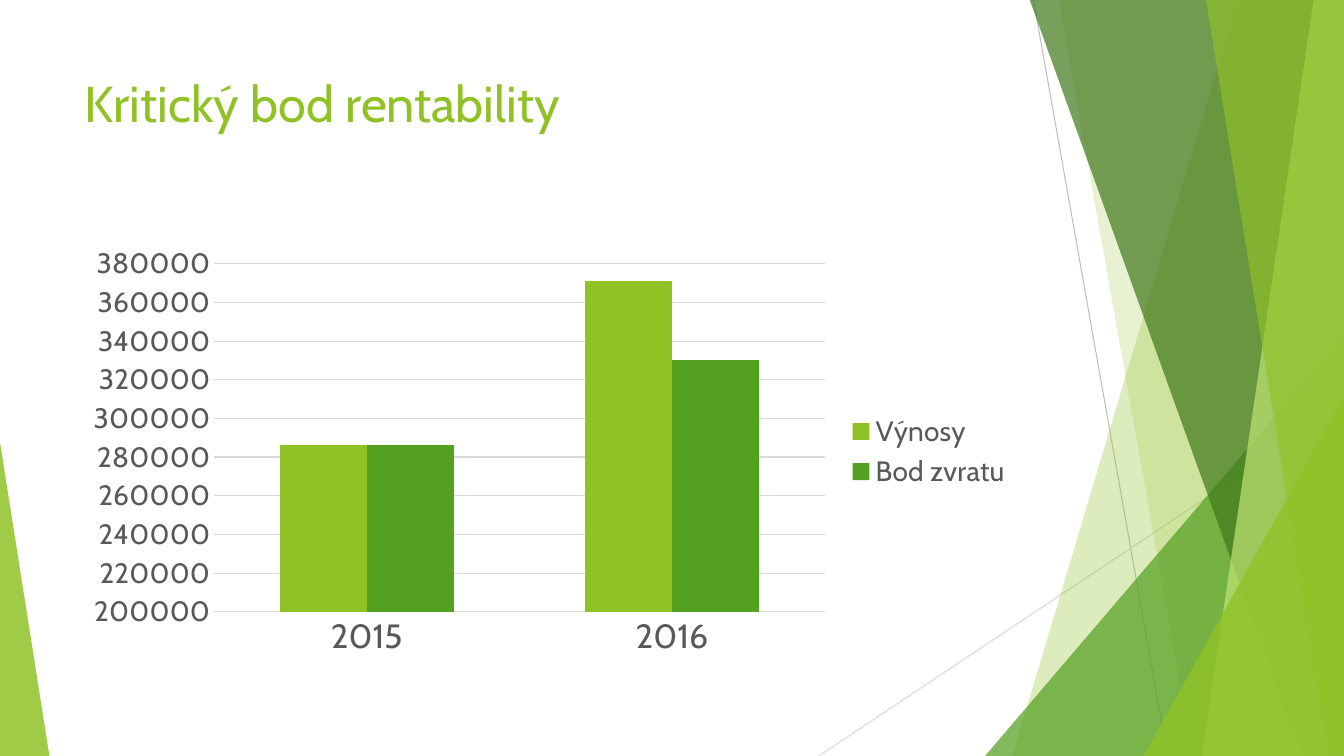
from lxml.etree import SubElement
from pptx import Presentation
from pptx.chart.data import CategoryChartData
from pptx.dml.color import RGBColor
from pptx.enum.chart import XL_CHART_TYPE, XL_LEGEND_POSITION, XL_TICK_MARK
from pptx.enum.shapes import MSO_CONNECTOR, MSO_SHAPE
from pptx.enum.text import MSO_ANCHOR, PP_ALIGN
from pptx.oxml.ns import qn
from pptx.util import Inches, Pt

LIME = RGBColor(0x90, 0xC2, 0x26)
GREEN = RGBColor(0x54, 0xA0, 0x21)
DARK_GREEN = RGBColor(0x3F, 0x78, 0x19)
PALE_LIME = RGBColor(0xC0, 0xE4, 0x74)
TEXT_GRAY = RGBColor(0x59, 0x59, 0x59)
MID_GRAY = RGBColor(0xBF, 0xBF, 0xBF)
LIGHT_GRAY = RGBColor(0xD9, 0xD9, 0xD9)
FONT = "Cabin"
TOP, RIGHT, BOTTOM = -0.01, 13.33, 7.5


def style_facet(facet, color, opacity):
    """Fill with a see-through colour, without outline or shadow."""
    facet.shadow.inherit = False
    facet.line.fill.background()
    facet.fill.solid()
    facet.fill.fore_color.rgb = color
    color_xml = facet._element.spPr.find(qn("a:solidFill"))[0]
    SubElement(color_xml, qn("a:alpha"), val=str(opacity * 1000))


def style_font(font, size, color):
    font.name = FONT
    font.size = Pt(size)
    font.color.rgb = color


prs = Presentation()
prs.slide_width, prs.slide_height = Inches(RIGHT), Inches(BOTTOM)
slide = prs.slides.add_slide(prs.slide_layouts[5])
shapes = slide.shapes

# Thin lines behind the facets
for x1, y1, x2, color in [(10.25, 0, 11.58, MID_GRAY), (RIGHT, 4.03, 8.12, LIGHT_GRAY)]:
    ray = shapes.add_connector(
        MSO_CONNECTOR.STRAIGHT, Inches(x1), Inches(y1), Inches(x2), Inches(BOTTOM))
    ray.line.color.rgb = color
    ray.line.width = Pt(0.75)
    SubElement(ray._element.spPr, qn("a:effectLst"))

# Facets from back to front: a band has top and bottom x, a triangle has
# left, top, width and apex position; each ends at the slide's bottom edge
facets = [
    ("band", (12.28, 10.04), LIME, 30),
    ("band", (10.5, 11.83), LIME, 20),
    ("triangle", (9.77, 3.33, 3.56, 1), GREEN, 72),
    ("band", (10.21, 12.91), DARK_GREEN, 70),
    ("band", (13.03, 11.92), PALE_LIME, 70),
    ("band", (11.96, 13.18), LIME, 65),
    ("triangle", (11.34, 3.93, 1.99, 1), LIME, 80),
    ("triangle", (0, 4.39, 0.49, 0), LIME, 85),
]
for kind, place, color, opacity in facets:
    if kind == "band":
        top_x, bottom_x = place
        outline = shapes.build_freeform(Inches(top_x), Inches(TOP))
        corners = [(RIGHT, TOP), (RIGHT, BOTTOM), (bottom_x, BOTTOM)]
        outline.add_line_segments([(Inches(x), Inches(y)) for x, y in corners], close=True)
        facet = outline.convert_to_shape()
    else:
        left, top, width, apex = place
        facet = shapes.add_shape(
            MSO_SHAPE.ISOSCELES_TRIANGLE,
            Inches(left), Inches(top), Inches(width), Inches(BOTTOM - top))
        facet.adjustments[0] = apex
    style_facet(facet, color, opacity)

# Title
title = shapes.title
title.left, title.top, title.width, title.height = (
    Inches(0.74), Inches(0.67), Inches(9.4), Inches(1.44))
title.text_frame.text = "Kritický bod rentability"
title.text_frame.vertical_anchor = MSO_ANCHOR.TOP
heading = title.text_frame.paragraphs[0]
heading.alignment = PP_ALIGN.LEFT
style_font(heading.runs[0].font, 36, LIME)

# Revenue against break-even point
data = CategoryChartData()
data.categories = ["2015", "2016"]
data.add_series("Výnosy", (286000, 371000))
data.add_series("Bod zvratu", (286000, 330000))
chart = shapes.add_chart(
    XL_CHART_TYPE.COLUMN_CLUSTERED,
    Inches(0.74), Inches(2.36), Inches(9.4), Inches(4.24), data).chart
chart.has_title = False
style_font(chart.font, 10, TEXT_GRAY)

chart.has_legend = True
chart.legend.position = XL_LEGEND_POSITION.RIGHT
chart.legend.include_in_layout = False
style_font(chart.legend.font, 20, TEXT_GRAY)

plot = chart.plots[0]
plot.vary_by_categories = False
plot.gap_width = 150
for series, color in zip(plot.series, (LIME, GREEN)):
    series.format.fill.solid()
    series.format.fill.fore_color.rgb = color

years, amounts = chart.category_axis, chart.value_axis
for axis, size in ((years, 24), (amounts, 20)):
    axis.major_tick_mark = axis.minor_tick_mark = XL_TICK_MARK.NONE
    style_font(axis.tick_labels.font, size, TEXT_GRAY)
amounts.minimum_scale = 200000
amounts.maximum_scale = 380000
amounts.major_unit = 20000
amounts.tick_labels.number_format = "General"
amounts.tick_labels.number_format_is_linked = False
amounts.format.line.fill.background()
amounts.has_major_gridlines = True
for line in (years.format.line, amounts.major_gridlines.format.line):
    line.color.rgb = LIGHT_GRAY
    line.width = Pt(0.75)

prs.save("out.pptx")
